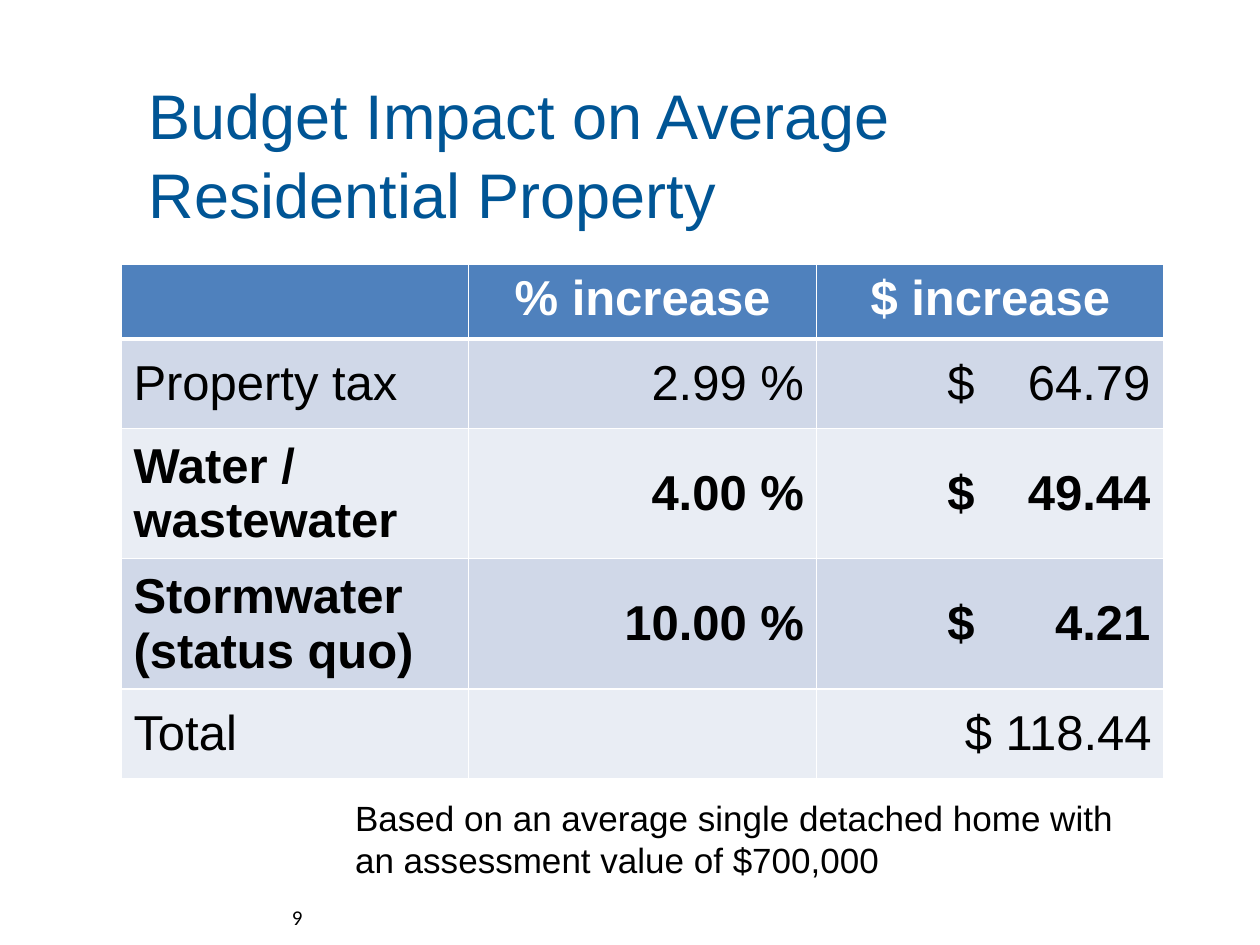
from pptx import Presentation
from pptx.dml.color import RGBColor
from pptx.enum import text
from pptx.oxml import ns, xmlchemy
from pptx.util import Inches, Pt

LEFT, CENTER, RIGHT = text.PP_ALIGN.LEFT, text.PP_ALIGN.CENTER, text.PP_ALIGN.RIGHT
MIDDLE, TOP = text.MSO_ANCHOR.MIDDLE, text.MSO_ANCHOR.TOP
WHITE, BLACK, TITLE_BLUE, HEADER_BLUE = "FFFFFF", "000000", "005595", "4F81BD"
BAND_FILLS = ("D0D8E8", "E9EDF4")
HEADINGS = ("", "% increase", "$ increase")
# Label, percentage, dollar amount, bold
CHARGES = (
    ("Property tax", "2.99 %", "\t$\t64.79", False),
    ("Water / wastewater", "4.00 %", "\t$\t49.44", True),
    ("Stormwater (status quo)", "10.00 %", "\t$\t4.21", True),
    ("Total", "", "$ 118.44", False),
)
COLUMN_WIDTH = 2.76
ROW_HEIGHTS = (0.59, 0.71, 0.96, 0.96, 0.71)
DOLLAR_TABS = ((0.94, "l"), (2.55, "r"))


def color(value):
    return RGBColor.from_string(value)


def add_run(paragraph, words, size, hue, font="Arial", bold=False):
    run = paragraph.add_run()
    run.text = words
    run.font.name, run.font.size, run.font.bold = font, Pt(size), bold
    run.font.color.rgb = color(hue)


def place(shape, left, top, width, height):
    shape.left, shape.top = Inches(left), Inches(top)
    shape.width, shape.height = Inches(width), Inches(height)


def add_title(slide, lines):
    title = slide.shapes.title
    place(title, 1.08, 0.58, 9, 1.25)
    frame = title.text_frame
    frame.auto_size, frame.vertical_anchor = text.MSO_AUTO_SIZE.NONE, MIDDLE
    paragraph = frame.paragraphs[0]
    paragraph.alignment, paragraph.line_spacing = LEFT, 1.05
    for index, line in enumerate(lines):
        if index:
            paragraph.add_line_break()
        add_run(paragraph, line, 36, TITLE_BLUE)


def add_text_box(slide, box, lines, size, font="Arial", align=LEFT, anchor=TOP, wrap=True):
    frame = slide.shapes.add_textbox(*map(Inches, box)).text_frame
    frame.word_wrap, frame.vertical_anchor = wrap, anchor
    for index, line in enumerate(lines):
        paragraph = frame.add_paragraph() if index else frame.paragraphs[0]
        paragraph.alignment = align
        add_run(paragraph, line, size, BLACK, font)


def add_tabs(paragraph, stops):
    tab_list = xmlchemy.OxmlElement("a:tabLst")
    for position, align in stops:
        tab = xmlchemy.OxmlElement("a:tab")
        tab.set("pos", str(Inches(position)))
        tab.set("algn", align)
        tab_list.append(tab)
    paragraph._p.get_or_add_pPr().append(tab_list)


def set_borders(cell, top=1, bottom=1):
    """Draw white borders, inserted before the fill as the schema requires."""
    properties = cell._tc.get_or_add_tcPr()
    for index, (side, width) in enumerate((("L", 1), ("R", 1), ("T", top), ("B", bottom))):
        line = xmlchemy.OxmlElement(f"a:ln{side}")
        line.set("w", str(Pt(width)))
        solid = xmlchemy.OxmlElement("a:solidFill")
        hue = xmlchemy.OxmlElement("a:srgbClr")
        hue.set("val", WHITE)
        solid.append(hue)
        line.append(solid)
        properties.insert(index, line)


def fill_cell(cell, words, fill, hue, align, anchor, bold):
    cell.fill.solid()
    cell.fill.fore_color.rgb = color(fill)
    cell.vertical_anchor = anchor
    paragraph = cell.text_frame.paragraphs[0]
    if "\t" in words:
        add_tabs(paragraph, DOLLAR_TABS)
        align = LEFT
    paragraph.alignment = align
    if words:
        add_run(paragraph, words, 28, hue, bold=bold)
    else:
        paragraph.font.size = Pt(28)


def add_impact_table(slide):
    table = slide.shapes.add_table(
        len(ROW_HEIGHTS), len(HEADINGS), Inches(0.96), Inches(2.1),
        Inches(COLUMN_WIDTH * len(HEADINGS)), Inches(sum(ROW_HEIGHTS))).table
    for column in table.columns:
        column.width = Inches(COLUMN_WIDTH)
    for row, height in zip(table.rows, ROW_HEIGHTS):
        row.height = Inches(height)
    for column, heading in enumerate(HEADINGS):
        cell = table.cell(0, column)
        fill_cell(cell, heading, HEADER_BLUE, WHITE, CENTER, TOP, True)
        set_borders(cell, bottom=3)
    for row, (*values, bold) in enumerate(CHARGES, 1):
        for column, value in enumerate(values):
            cell = table.cell(row, column)
            fill_cell(cell, value, BAND_FILLS[(row - 1) % 2], BLACK,
                      RIGHT if column else LEFT, MIDDLE, bold)
            set_borders(cell, top=3 if row == 1 else 1)


def main():
    presentation = Presentation()
    presentation.slide_width, presentation.slide_height = Inches(10), Inches(7.5)
    slide = presentation.slides.add_slide(presentation.slide_layouts[5])
    add_title(slide, ("Budget Impact on Average", "Residential Property"))
    add_text_box(slide, (1.08, 7.08, 1.42, 0.4), ("9",), 12, "Calibri", RIGHT, MIDDLE)
    add_impact_table(slide)
    add_text_box(slide, (2.72, 6.27, 6.34, 0.77),
                 ("Based on an average single detached home with",
                  "an assessment value of $700,000"), 20, wrap=False)
    presentation.save("out.pptx")


if __name__ == "__main__":
    main()
